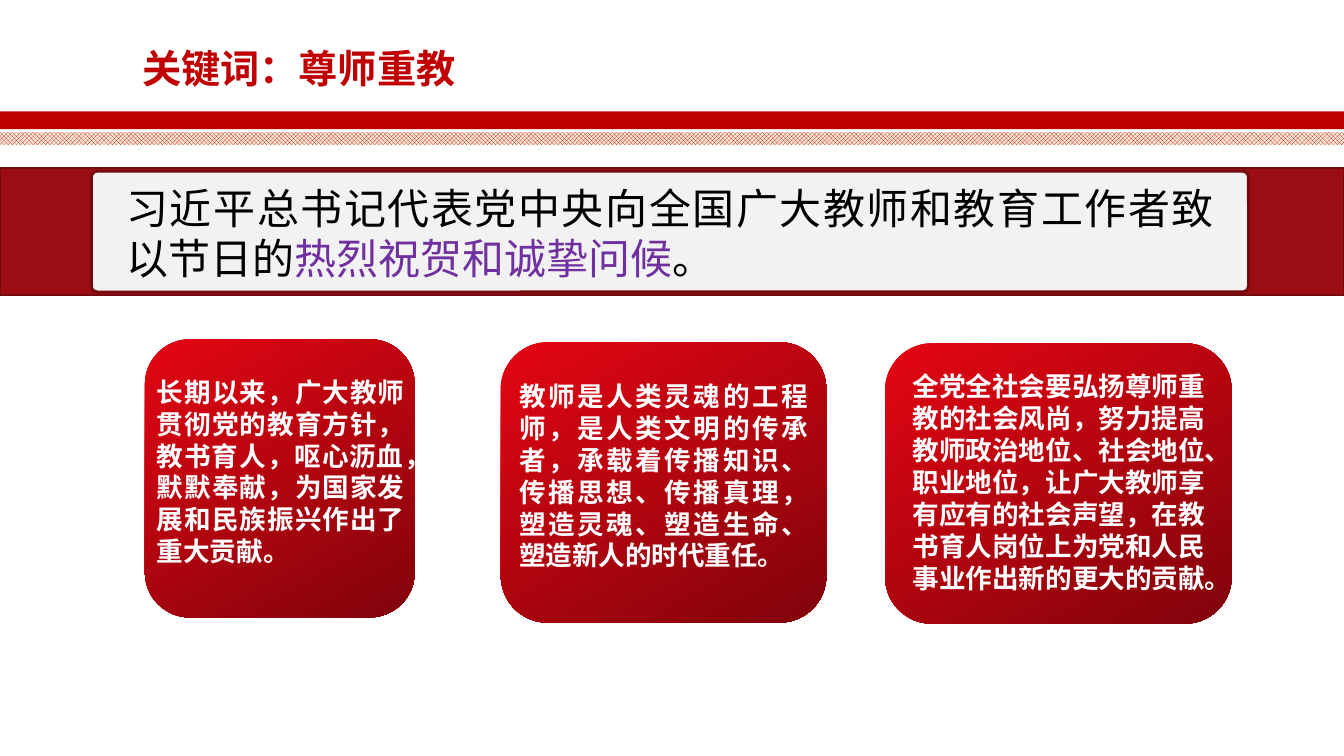
import pptx
import pptx.util
from lxml import etree
from pptx.dml.color import RGBColor
from pptx.enum.dml import MSO_PATTERN
from pptx.enum.shapes import MSO_SHAPE
from pptx.enum.text import MSO_ANCHOR, PP_ALIGN
from pptx.oxml.ns import qn

PX = 9525  # EMU per px, 96 px to the inch
SLIDE_WIDTH, SLIDE_HEIGHT = 1280, 720

SANS = "Noto Sans CJK SC"
SANS_BAND = "Noto Sans CJK JP"
RED = "C00000"
BAND_RED = "9B0D13"
BAND_EDGE = "730A0E"
CARD_TOP, CARD_BOTTOM = "E30613", "81040B"
CARD_TEXT = "FEFEFE"

# Card box, text box, alignment, text
CARDS = [
    ((138, 323, 257, 265), (140, 353, 255, 194), PP_ALIGN.JUSTIFY,
     "长期以来，广大教师贯彻党的教育方针，教书育人，呕心沥血，默默奉献，"
     "为国家发展和民族振兴作出了重大贡献。"),
    ((477, 326, 310, 267), (485, 357, 294, 194), PP_ALIGN.JUSTIFY,
     "教师是人类灵魂的工程师，是人类文明的传承者，承载着传播知识、传播思想、"
     "传播真理，塑造灵魂、塑造生命、塑造新人的时代重任。"),
    ((843, 327, 330, 267), (860, 348, 301, 225), PP_ALIGN.LEFT,
     "全党全社会要弘扬尊师重教的社会风尚，努力提高教师政治地位、社会地位、"
     "职业地位，让广大教师享有应有的社会声望，在教书育人岗位上为党和人民"
     "事业作出新的更大的贡献。"),
]


def color(hex_string):
    return RGBColor.from_string(hex_string)


def emu(box):
    return [length * PX for length in box]


def add_box(slide, box, kind=MSO_SHAPE.RECTANGLE, fill=None, line=None, radius=None):
    shape = slide.shapes.add_shape(kind, *emu(box))
    shape.shadow.inherit = False
    if radius is not None:
        shape.adjustments[0] = radius
    if fill:
        shape.fill.solid()
        shape.fill.fore_color.rgb = color(fill)
    if line:
        shape.line.color.rgb = color(line)
        shape.line.width = pptx.util.Pt(2)
    else:
        shape.line.fill.background()
    return shape


def add_text(slide, box, runs, size, font=SANS, bold=False, align=PP_ALIGN.LEFT,
             anchor=MSO_ANCHOR.TOP, spacing=1.0):
    """Add one paragraph made of (text, colour) runs."""
    frame = slide.shapes.add_textbox(*emu(box)).text_frame
    frame.word_wrap = True
    frame.vertical_anchor = anchor
    paragraph = frame.paragraphs[0]
    paragraph.alignment = align
    paragraph.line_spacing = spacing
    for text, text_color in runs:
        run = paragraph.add_run()
        run.text = text
        run.font.size = pptx.util.Pt(size)
        run.font.bold = bold
        run.font.color.rgb = color(text_color)
        run.font.name = font
        east_asian = etree.SubElement(run.font._element, qn("a:ea"))
        east_asian.set("typeface", font)


def add_card(slide, box, text_box, align, text):
    card = add_box(slide, box, MSO_SHAPE.ROUNDED_RECTANGLE)
    card.fill.gradient()
    card.fill.gradient_angle = 300
    for stop, position, stop_color in zip(
            card.fill.gradient_stops, (0, 1), (CARD_TOP, CARD_BOTTOM)):
        stop.position = position
        stop.color.rgb = color(stop_color)
    add_text(slide, text_box, [(text, CARD_TEXT)], 19, bold=True, align=align)


def add_header(slide):
    trellis = add_box(slide, (0, 126, SLIDE_WIDTH, 12))
    trellis.fill.patterned()
    trellis.fill.pattern = MSO_PATTERN.TRELLIS
    trellis.fill.fore_color.rgb = color(RED)
    trellis.fill.back_color.rgb = color("F7EDD8")
    add_box(slide, (0, 106, SLIDE_WIDTH, 17), fill=RED)
    add_text(slide, (126, 44, 401, 47), [("关键词：尊师重教", RED)], 28,
             bold=True, anchor=MSO_ANCHOR.MIDDLE, spacing=0.9)


def add_band(slide):
    add_box(slide, (0, 160, SLIDE_WIDTH, 121), fill=BAND_RED, line=BAND_EDGE)
    add_box(slide, (87, 163, 1102, 115), MSO_SHAPE.ROUNDED_RECTANGLE,
            fill="F2F2F2", line=BAND_EDGE, radius=0.05)
    add_text(slide, (111, 169, 1056, 107), [
        ("习近平总书记代表党中央向全国广大教师和教育工作者致以节日的", "000000"),
        ("热烈祝贺和诚挚问候", "7030A0"),
        ("。", "000000"),
    ], 30, font=SANS_BAND, align=PP_ALIGN.JUSTIFY)


def main():
    presentation = pptx.Presentation()
    presentation.slide_width = SLIDE_WIDTH * PX
    presentation.slide_height = SLIDE_HEIGHT * PX
    slide = presentation.slides.add_slide(presentation.slide_layouts[6])

    # Quotation band
    add_band(slide)
    # Three statements
    for card in CARDS:
        add_card(slide, *card)
    # Title and rules
    add_header(slide)

    presentation.save("out.pptx")


if __name__ == "__main__":
    main()
